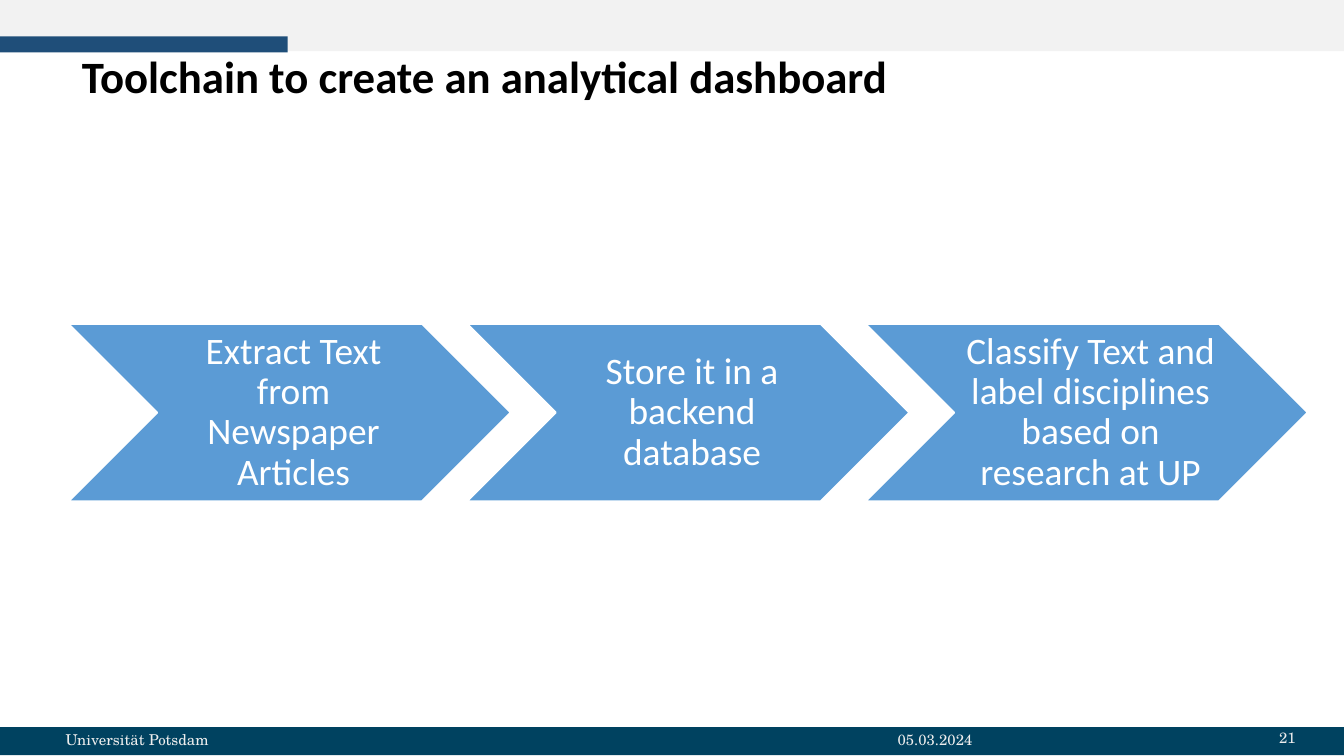
from pptx import Presentation
from pptx.dml.color import RGBColor
from pptx.enum.shapes import MSO_SHAPE
from pptx.enum.text import MSO_ANCHOR, PP_ALIGN
from pptx.util import Inches, Pt

RECTANGLE = MSO_SHAPE.RECTANGLE
CHEVRON = MSO_SHAPE.CHEVRON
MIDDLE = MSO_ANCHOR.MIDDLE
LEFT, CENTER, RIGHT = PP_ALIGN.LEFT, PP_ALIGN.CENTER, PP_ALIGN.RIGHT

PAGE_WIDTH = 10
PAGE_HEIGHT = PAGE_WIDTH * 9 / 16
HEADING_FONT, FOOTER_FONT = "Calibri", "TeX Gyre Schola"
STEPS = [
    "Extract Text from Newspaper Articles",
    "Store it in a backend database",
    "Classify Text and label disciplines based on research at UP",
]


def color(hex_code):
    return RGBColor.from_string(hex_code)


def add_block(page, kind, left, top, width, height, fill, line=None):
    block = page.shapes.add_shape(
        kind, Inches(left), Inches(top), Inches(width), Inches(height))
    block.shadow.inherit = False
    block.fill.solid()
    block.fill.fore_color.rgb = color(fill)
    if line:
        block.line.color.rgb = color(line)
        block.line.width = Pt(1)
    else:
        block.line.fill.background()


def add_label(page, text, left, top, width, height, font, size, hex_code,
              align=LEFT, bold=False, spacing=1.0, insets=(0.1, 0.05, 0.1, 0.05)):
    box = page.shapes.add_textbox(
        Inches(left), Inches(top), Inches(width), Inches(height))
    frame = box.text_frame
    frame.word_wrap = True
    frame.vertical_anchor = MIDDLE
    (frame.margin_left, frame.margin_top,
     frame.margin_right, frame.margin_bottom) = map(Inches, insets)
    para = frame.paragraphs[0]
    para.alignment = align
    para.line_spacing = spacing
    span = para.add_run()
    span.text = text
    span.font.name = font
    span.font.size = Pt(size)
    span.font.bold = bold
    span.font.color.rgb = color(hex_code)


def add_header(page, left, top, width):
    add_block(page, RECTANGLE, left, top, width, 0.38, "F2F2F2")
    add_block(page, RECTANGLE, left, top + 0.27, 2.14, 0.12, "1F4E79")
    add_label(page, "Toolchain to create an analytical dashboard",
              left + 0.51, top + 0.39, 9.22, 0.39, HEADING_FONT, 24, "000000",
              bold=True, spacing=0.9)


def add_process(page, left, top, width, height):
    step_width = 3.29
    pitch = (width - step_width) / (len(STEPS) - 1)
    inset = height / 2
    for index, step in enumerate(STEPS):
        step_left = left + index * pitch
        add_block(page, CHEVRON, step_left, top, step_width, height,
                  "5B9BD5", "FFFFFF")
        add_label(page, step, step_left + inset, top, step_width - height, height,
                  HEADING_FONT, 20, "FFFFFF", CENTER, spacing=0.9,
                  insets=(0.08, 0.03, 0.02, 0.03))


def add_footer(page, left, top, width, height):
    add_block(page, RECTANGLE, left, top, width, height, "004260")
    fields = [
        ("Universität Potsdam", 0.39, -0.06, 5.91, LEFT),
        ("05.03.2024", 6.58, -0.06, 1.84, LEFT),
        ("21", 8.68, -0.07, 1.06, RIGHT),
    ]
    for text, offset, rise, field_width, align in fields:
        add_label(page, text, left + offset, top + rise, field_width, 0.3,
                  FOOTER_FONT, 8, "EDEDED", align)


def main():
    deck = Presentation()
    deck.slide_width = Inches(PAGE_WIDTH)
    deck.slide_height = Inches(PAGE_HEIGHT)
    page = deck.slides.add_slide(deck.slide_layouts[6])
    add_header(page, 0, 0, PAGE_WIDTH)
    add_process(page, 0.51, 2.41, 9.22, 1.32)
    add_footer(page, 0, 5.41, PAGE_WIDTH, 0.21)
    deck.save("out.pptx")


if __name__ == "__main__":
    main()
